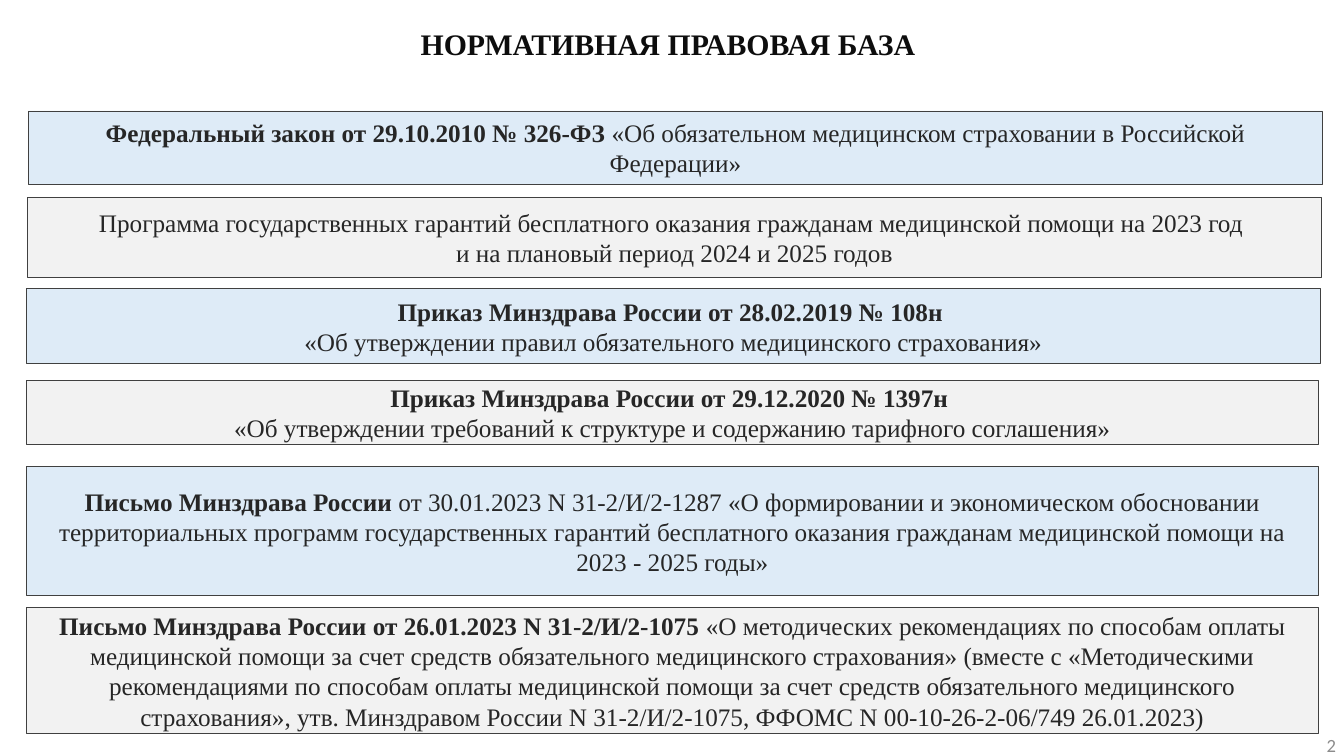
from pptx import Presentation
from pptx.dml.color import RGBColor
from pptx.enum.shapes import MSO_SHAPE
from pptx.enum.text import MSO_ANCHOR, PP_ALIGN
from pptx.util import Inches, Pt

WIDTH, HEIGHT = Inches(13.33), Inches(7.5)
SERIF = "Times New Roman"
BAND_FILLS = ("DEEBF7", "F2F2F2")

# left, top, width, height in percent of the slide; bold text; regular text
DOCUMENTS = [
    ((2.1, 14.67, 96.32, 9.73),
     "Федеральный закон от 29.10.2010 № 326-ФЗ ",
     "«Об обязательном медицинском страховании в Российской Федерации»"),
    ((2.03, 26.13, 96.32, 10.53),
     "",
     "Программа государственных гарантий бесплатного оказания гражданам "
     "медицинской помощи на 2023 год \nи на плановый период 2024 и 2025 годов"),
    ((1.95, 38.13, 96.32, 10),
     "Приказ Минздрава России от 28.02.2019 № 108н \n",
     "«Об утверждении правил обязательного медицинского страхования»"),
    ((1.95, 50.27, 96.17, 8.53),
     "Приказ Минздрава России от 29.12.2020 № 1397н \n",
     "«Об утверждении требований к структуре и содержанию тарифного соглашения»"),
    ((1.95, 61.73, 96.17, 17.07),
     "Письмо Минздрава России ",
     "от 30.01.2023 N 31-2/И/2-1287 «О формировании и экономическом обосновании "
     "территориальных программ государственных гарантий бесплатного оказания "
     "гражданам медицинской помощи на 2023 - 2025 годы»"),
    ((1.95, 80.4, 96.17, 16.67),
     "Письмо Минздрава России от 26.01.2023 N 31-2/И/2-1075 ",
     "«О методических рекомендациях по способам оплаты медицинской помощи за счет "
     "средств обязательного медицинского страхования» (вместе с «Методическими "
     "рекомендациями по способам оплаты медицинской помощи за счет средств "
     "обязательного медицинского страхования», утв. Минздравом России "
     "N 31-2/И/2-1075, ФФОМС N 00-10-26-2-06/749 26.01.2023)"),
]


def color(value):
    return RGBColor.from_string(value)


def place(left, top, width, height):
    """Turn percent of the slide into lengths."""
    return (int(WIDTH * left / 100), int(HEIGHT * top / 100),
            int(WIDTH * width / 100), int(HEIGHT * height / 100))


def style_paragraph(paragraph, name, size, value, alignment):
    paragraph.alignment = alignment
    paragraph.font.name = name
    paragraph.font.size = Pt(size)
    paragraph.font.color.rgb = color(value)


def add_words(paragraph, text, bold):
    """Add text as runs, with a line break at each newline."""
    for index, line in enumerate(text.split("\n")):
        if index:
            paragraph.add_line_break()
        if line:
            run = paragraph.add_run()
            run.text = line
            run.font.bold = bold


def add_document(slide, area, fill, title, subject):
    shape = slide.shapes.add_shape(MSO_SHAPE.RECTANGLE, *place(*area))
    shape.shadow.inherit = False
    shape.fill.solid()
    shape.fill.fore_color.rgb = color(fill)
    shape.line.color.rgb = color("404040")
    shape.line.width = Pt(0.5)
    frame = shape.text_frame
    frame.word_wrap = True
    frame.vertical_anchor = MSO_ANCHOR.MIDDLE
    paragraph = frame.paragraphs[0]
    style_paragraph(paragraph, SERIF, 18, "262626", PP_ALIGN.CENTER)
    add_words(paragraph, title, True)
    add_words(paragraph, subject, False)


def add_label(slide, area, text, insets, anchor, bold, *style):
    frame = slide.shapes.add_textbox(*place(*area)).text_frame
    frame.word_wrap = True
    frame.vertical_anchor = anchor
    frame.margin_left = frame.margin_right = Inches(insets[0])
    frame.margin_top = frame.margin_bottom = Inches(insets[1])
    paragraph = frame.paragraphs[0]
    style_paragraph(paragraph, *style)
    add_words(paragraph, text, bold)


def main():
    presentation = Presentation()
    presentation.slide_width, presentation.slide_height = WIDTH, HEIGHT
    slide = presentation.slides.add_slide(presentation.slide_layouts[6])
    add_label(slide, (0.75, 2.53, 97.9, 6.53), "НОРМАТИВНАЯ ПРАВОВАЯ БАЗА",
              (0.13, 0.07), MSO_ANCHOR.TOP, True,
              SERIF, 21.3, "0D0D0D", PP_ALIGN.CENTER)
    for index, (area, title, subject) in enumerate(DOCUMENTS):
        add_document(slide, area, BAND_FILLS[index % 2], title, subject)
    add_label(slide, (77.42, 95.87, 22.51, 5.33), "2",
              (0.07, 0.04), MSO_ANCHOR.MIDDLE, False,
              "Calibri", 13.3, "8C8C8C", PP_ALIGN.RIGHT)
    presentation.save("out.pptx")


if __name__ == "__main__":
    main()
